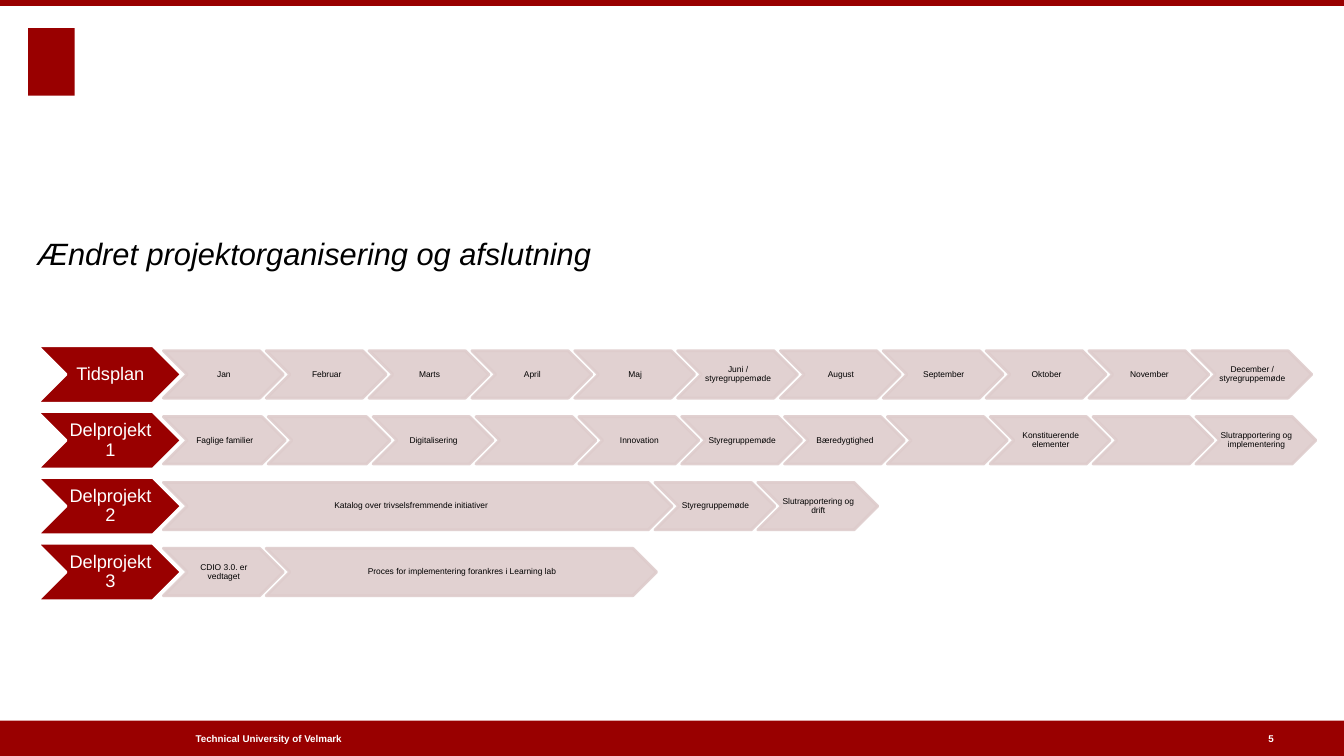
"""Build a project timeline slide with four rows of chevrons."""
import dataclasses

import lxml.etree
import pptx
import pptx.dml.color
import pptx.enum.shapes
import pptx.enum.text
import pptx.oxml.ns
import pptx.util

SHAPES = pptx.enum.shapes.MSO_SHAPE
ALIGN = pptx.enum.text.PP_ALIGN


@dataclasses.dataclass(frozen=True)
class Theme:
    """Colours, font and type sizes of the slide."""
    red: str = "990000"
    rose: str = "DECCCC"
    white: str = "FFFFFF"
    black: str = "000000"
    font: str = "Arial"
    title_size: int = 22
    label_size: int = 13
    step_size: int = 6
    footer_size: int = 7
    outline: int = 2
    step_opacity: int = 90


@dataclasses.dataclass(frozen=True)
class Grid:
    """Slide size and timeline grid in inches."""
    width: float = 13.33
    height: float = 7.5
    margin: float = 0.37
    top: float = 3.43
    row_pitch: float = 1.96 / 3
    label_width: float = 1.43
    label_height: float = 0.57
    steps_left: float = 1.62
    column: float = 1.02
    overlap: float = 0.17
    step_height: float = 0.47
    footer_height: float = 0.35


THEME = Theme()
GRID = Grid()

TIMELINE = [
    ("Tidsplan", [
        ("Jan", 1), ("Februar", 1), ("Marts", 1), ("April", 1), ("Maj", 1),
        ("Juni / styregruppemøde", 1), ("August", 1), ("September", 1),
        ("Oktober", 1), ("November", 1), ("December / styregruppemøde", 1)]),
    ("Delprojekt 1", [
        ("Faglige familier", 1.02), ("", 1.02), ("Digitalisering", 1), ("", 1),
        ("Innovation", 1), ("Styregruppemøde", 1), ("Bæredygtighed", 1), ("", 1),
        ("Konstituerende elementer", 1), ("", 1),
        ("Slutrapportering og implementering", 1)]),
    ("Delprojekt 2", [
        ("Katalog over trivselsfremmende initiativer", 4.78, 0.14),
        ("Styregruppemøde", 1), ("Slutrapportering og drift", 1)]),
    ("Delprojekt 3", [
        ("CDIO 3.0. er vedtaget", 1),
        ("Proces for implementering forankres i Learning lab", 3.63)]),
]


def rgb(code):
    """Return a colour from its hex code."""
    return pptx.dml.color.RGBColor.from_string(code)


def box(left, top, width, height):
    """Return a frame in inches as slide lengths."""
    return [pptx.util.Inches(length) for length in (left, top, width, height)]


def write(holder, wording, size, color, insets=(0, 0, 0, 0), align=ALIGN.LEFT,
          bold=False, italic=False, anchor=pptx.enum.text.MSO_ANCHOR.MIDDLE):
    """Put one formatted paragraph in a shape and return the paragraph."""
    frame = holder.text_frame
    frame.word_wrap = True
    frame.vertical_anchor = anchor
    (frame.margin_left, frame.margin_top,
     frame.margin_right, frame.margin_bottom) = box(*insets)
    frame.text = wording
    paragraph = frame.paragraphs[0]
    paragraph.alignment = align
    for run in paragraph.runs:
        run.font.name = THEME.font
        run.font.size = pptx.util.Pt(size)
        run.font.color.rgb = rgb(color)
        run.font.bold = bold
        run.font.italic = italic
    return paragraph


def add_filled(slide, kind, frame, color, outline=None):
    """Add a filled preset shape, outlined if a line colour is given."""
    filled = slide.shapes.add_shape(kind, *box(*frame))
    filled.shadow.inherit = False
    filled.fill.solid()
    filled.fill.fore_color.rgb = rgb(color)
    if outline:
        filled.line.color.rgb = rgb(outline)
        filled.line.width = pptx.util.Pt(THEME.outline)
    else:
        filled.line.fill.background()
    return filled


def add_text(slide, frame, wording, size, color, **style):
    """Add a text box and return its paragraph."""
    return write(slide.shapes.add_textbox(*box(*frame)), wording, size, color, **style)


def soften(chevron, opacity):
    """Set the opacity in percent of a shape's fill and line."""
    tag = pptx.oxml.ns.qn("a:srgbClr")
    for color in chevron.element.spPr.iter(tag):
        alpha = lxml.etree.SubElement(color, pptx.oxml.ns.qn("a:alpha"))
        alpha.set("val", str(opacity * 1000))


def add_label(slide, top, wording):
    """Add the red chevron that names a row."""
    frame = (GRID.margin, top, GRID.label_width, GRID.label_height)
    label = add_filled(slide, SHAPES.CHEVRON, frame, THEME.red, THEME.white)
    write(label, wording, THEME.label_size, THEME.white,
          (0.02, 0.01, 0, 0.01), ALIGN.CENTER).line_spacing = 0.9


def add_step(slide, left, top, width, wording, right_inset=0):
    """Add one pale chevron of a row."""
    frame = (left, top, width, GRID.step_height)
    step = add_filled(slide, SHAPES.CHEVRON, frame, THEME.rose, THEME.rose)
    soften(step, THEME.step_opacity)
    if wording:
        write(step, wording, THEME.step_size, THEME.black,
              (0.01, 0, right_inset, 0), ALIGN.CENTER).line_spacing = 0.9


def add_row(slide, index, name, steps):
    """Add a row label and its chain of overlapping steps."""
    top = GRID.top + index * GRID.row_pitch
    add_label(slide, top, name)
    step_top = top + (GRID.label_height - GRID.step_height) / 2
    left = GRID.steps_left
    for wording, columns, *right_inset in steps:
        advance = columns * GRID.column
        add_step(slide, left, step_top, advance + GRID.overlap, wording, *right_inset)
        left += advance


def add_page_frame(slide):
    """Add the top band, emblem, footer band and footer texts."""
    footer_top = GRID.height - GRID.footer_height
    for frame in ((0, footer_top, GRID.width, GRID.footer_height),
                  (0.28, 0.28, 0.46, 0.67),
                  (0, 0, GRID.width, 0.06)):
        add_filled(slide, SHAPES.RECTANGLE, frame, THEME.red)
    for left, width, wording in ((1.94, 3.72, "Technical University of Velmark"),
                                 (12.58, 0.47, "5")):
        add_text(slide, (left, footer_top, width, GRID.footer_height), wording,
                 THEME.footer_size, THEME.white, bold=True)


def main():
    """Build and save the slide."""
    deck = pptx.Presentation()
    deck.slide_width, deck.slide_height = box(0, 0, GRID.width, GRID.height)[2:]
    slide = deck.slides.add_slide(deck.slide_layouts[6])
    add_page_frame(slide)
    for index, (name, steps) in enumerate(TIMELINE):
        add_row(slide, index, name, steps)
    title = add_text(slide, (GRID.margin, 2.33, 7.48, 0.37),
                     "Ændret projektorganisering og afslutning",
                     THEME.title_size, THEME.black, italic=True,
                     anchor=pptx.enum.text.MSO_ANCHOR.TOP)
    title.space_before = pptx.util.Pt(4.3)
    deck.save("out.pptx")


if __name__ == "__main__":
    main()
